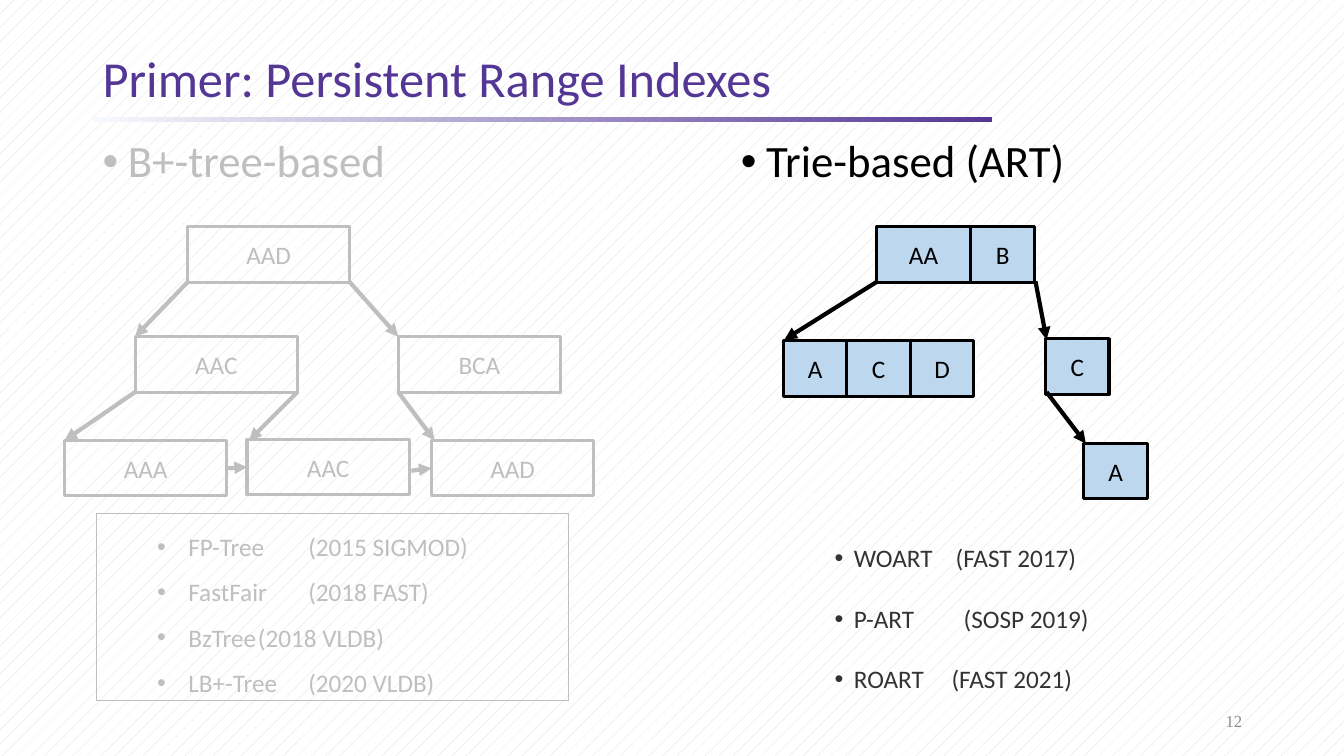
from dataclasses import dataclass

from pptx import Presentation
from pptx.dml.color import RGBColor
from pptx.enum.dml import MSO_PATTERN
from pptx.enum.shapes import MSO_CONNECTOR, MSO_SHAPE
from pptx.enum.text import MSO_ANCHOR, PP_ALIGN
from pptx.oxml.ns import qn
from pptx.util import Emu, Pt
from lxml.etree import SubElement

EMU_PER_PX = 9144  # 100 px to the inch
NODE_HEIGHT = 55
CELL = 63
PURPLE, GREY, BLACK, BLUE = "543795", "BFBFBF", "000000", "BDD7EE"
BODY_FONT = "Calibri"


@dataclass(frozen=True)
class Node:
    left: int
    top: int
    width: int
    label: str


@dataclass(frozen=True)
class Arrow:
    x1: int
    y1: int
    x2: int
    y2: int


@dataclass(frozen=True)
class Look:
    ink: str
    fill: str | None


@dataclass(frozen=True)
class Bullet:
    text: str
    size: int
    color: str
    indent: int
    hang: int
    line_spacing: float
    space_before: int = 0
    tab: int = 0


FADED = Look(GREY, None)
ACTIVE = Look(BLACK, BLUE)

LEAVES = [Node(64, 437, 161, "AAA"), Node(245, 436, 161, "AAC"), Node(428, 437, 161, "AAD")]
BTREE_NODES = [Node(186, 225, 161, "AAD"), Node(134, 334, 161, "AAC"),
               Node(395, 334, 161, "BCA"), *LEAVES]
BTREE_ARROWS = [Arrow(186, 280, 134, 334), Arrow(347, 280, 395, 334), Arrow(134, 389, 64, 437),
                Arrow(295, 389, 247, 437), Arrow(395, 389, 431, 437)]
TRIE_NODES = [Node(869, 225, 94, "AA"), Node(963, 225, CELL, "B"),
              *(Node(777 + i * CELL, 338, CELL, label) for i, label in enumerate("ACD")),
              Node(1037, 336, CELL, "C"), Node(1075, 440, CELL, "A")]
TRIE_ARROWS = [Arrow(869, 280, 778, 337), Arrow(1027, 279, 1038, 337), Arrow(1038, 389, 1077, 440)]

BTREE_WORKS = ["FP-Tree\t(2015 SIGMOD)", "FastFair\t(2018 FAST)",
               "BzTree\t(2018 VLDB)", "LB+-Tree\t(2020 VLDB)"]
TRIE_WORKS = [("WOART\t(FAST 2017)", 120), ("P-ART\t(SOSP 2019)", 128), ("ROART\t(FAST 2021)", 116)]


def px(value: int) -> Emu:
    return Emu(value * EMU_PER_PX)


def rgb(color: str) -> RGBColor:
    return RGBColor.from_string(color)


def add_span(para, text: str, size: int, color: str, font: str = BODY_FONT) -> None:
    span = para.add_run()
    span.text = text
    span.font.size = Pt(size)
    span.font.name = font
    span.font.color.rgb = rgb(color)


def add_text_box(page, left: int, top: int, width: int, height: int, anchor=MSO_ANCHOR.MIDDLE):
    box = page.shapes.add_textbox(px(left), px(top), px(width), px(height))
    box.text_frame.word_wrap = True
    box.text_frame.vertical_anchor = anchor
    return box


def add_rectangle(page, left: int, top: int, width: int, height: int, look: Look, line: float):
    box = page.shapes.add_shape(MSO_SHAPE.RECTANGLE, px(left), px(top), px(width), px(height))
    box.shadow.inherit = False
    if look.fill:
        box.fill.solid()
        box.fill.fore_color.rgb = rgb(look.fill)
    else:
        box.fill.background()
    box.line.color.rgb = rgb(look.ink)
    box.line.width = Pt(line)
    box.text_frame.word_wrap = True
    box.text_frame.vertical_anchor = MSO_ANCHOR.MIDDLE
    return box


def add_node(page, node: Node, look: Look):
    box = add_rectangle(page, node.left, node.top, node.width, NODE_HEIGHT, look, 2.25)
    para = box.text_frame.paragraphs[0]
    para.alignment = PP_ALIGN.CENTER
    add_span(para, node.label, 18, look.ink)
    return box


def add_arrow(page, arrow: Arrow, look: Look):
    connector = page.shapes.add_connector(
        MSO_CONNECTOR.STRAIGHT, px(arrow.x1), px(arrow.y1), px(arrow.x2), px(arrow.y2))
    connector.line.color.rgb = rgb(look.ink)
    connector.line.width = Pt(3)
    SubElement(connector.line._get_or_add_ln(), qn("a:tailEnd"), type="triangle")
    SubElement(connector._element.spPr, qn("a:effectLst"))
    return connector


def add_bullets(box, bullets: list[Bullet]) -> None:
    frame = box.text_frame
    for index, bullet in enumerate(bullets):
        para = frame.add_paragraph() if index else frame.paragraphs[0]
        para.alignment = PP_ALIGN.LEFT
        para.line_spacing = bullet.line_spacing
        para.space_before = Pt(bullet.space_before)
        properties = para._p.get_or_add_pPr()
        properties.set("marL", str(px(bullet.indent)))
        properties.set("indent", str(px(-bullet.hang)))
        SubElement(properties, qn("a:buFont"), typeface="Arial")
        SubElement(properties, qn("a:buChar"), char="•")
        if bullet.tab:
            stops = SubElement(properties, qn("a:tabLst"))
            SubElement(stops, qn("a:tab"), pos=str(px(bullet.tab)), algn="l")
        add_span(para, bullet.text, bullet.size, bullet.color)


def add_frame(page) -> None:
    # Patterned background
    backdrop = page.background.fill
    backdrop.patterned()
    backdrop.pattern = MSO_PATTERN.PERCENT_5
    backdrop.fore_color.rgb = rgb("D9D9D9")
    backdrop.back_color.rgb = rgb("FFFFFF")

    # Fading rule under the title
    rule = add_rectangle(page, 92, 116, 892, 5, FADED, 1)
    rule.line.fill.background()
    rule.fill.gradient()
    rule.fill.gradient_angle = 0
    for stop, color in zip(rule.fill.gradient_stops, ("F7FAFD", PURPLE)):
        stop.color.rgb = rgb(color)

    # Page number
    number = add_text_box(page, 942, 695, 300, 40).text_frame.paragraphs[0]
    number.alignment = PP_ALIGN.RIGHT
    add_span(number, "12", 12, "8C8C8C", "Times New Roman")

    # Title
    title = add_text_box(page, 92, 43, 1150, 75).text_frame.paragraphs[0]
    title.line_spacing = 0.9
    add_span(title, "Primer: Persistent Range Indexes", 36, PURPLE)


def main() -> None:
    deck = Presentation()
    deck.slide_width, deck.slide_height = px(1333), px(750)
    page = deck.slides.add_slide(deck.slide_layouts[6])
    add_frame(page)

    # Column headings
    for left, heading, color in ((92, "B+-tree-based", GREY), (725, "Trie-based (ART)", BLACK)):
        box = add_text_box(page, left, 133, 519, 93, MSO_ANCHOR.TOP)
        add_bullets(box, [Bullet(heading, 32, color, 25, 25, 0.9, 10)])

    # Both trees
    boxes = {}
    for nodes, arrows, look in ((BTREE_NODES, BTREE_ARROWS, FADED),
                                (TRIE_NODES, TRIE_ARROWS, ACTIVE)):
        for node in nodes:
            boxes[node] = add_node(page, node, look)
        for arrow in arrows:
            add_arrow(page, arrow, look)

    # Links between neighbouring leaves
    first, middle, last = (boxes[leaf] for leaf in LEAVES)
    link = add_arrow(page, Arrow(225, 465, 245, 464), FADED)
    link.begin_connect(first, 3)
    link.end_connect(middle, 1)
    link = add_arrow(page, Arrow(408, 467, 428, 465), FADED)
    link.end_connect(last, 1)

    # Published indexes of each kind
    works = add_rectangle(page, 96, 509, 468, 186, FADED, 0.75)
    add_bullets(works, [Bullet(text, 18, GREY, 81, 31, 1.5) for text in BTREE_WORKS])
    works = add_text_box(page, 818, 507, 288, 183)
    add_bullets(works, [Bullet(text, 18, "333333", 19, 19, 2, tab=tab) for text, tab in TRIE_WORKS])

    deck.save("out.pptx")


if __name__ == "__main__":
    main()
